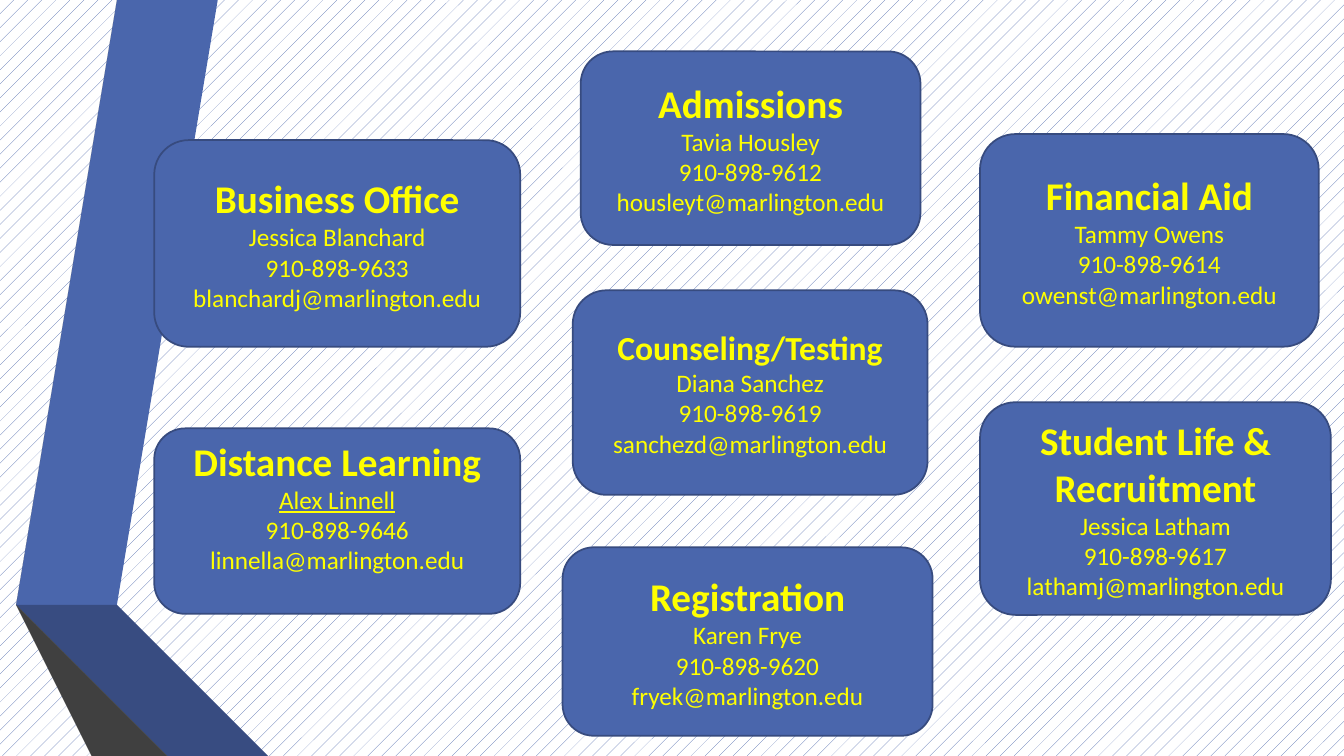
from pptx import Presentation
from pptx.dml.color import RGBColor
from pptx.enum.dml import MSO_PATTERN
from pptx.enum.shapes import MSO_SHAPE as Shape
from pptx.enum.text import MSO_ANCHOR as Anchor, PP_ALIGN as Align
from pptx.util import Inches, Pt

COLORS = {
    "blue": "4A66AC", "outline": "374B7F", "navy": "384C81",
    "navy edge": "253356", "grey": "595959", "dark grey": "404040",
    "grey edge": "262626", "yellow": "FFFF00", "white": "FFFFFF",
}
DOMAIN = "marlington.edu"
HEADING = {"name": "Calibri", "size": Pt(28), "bold": True}
DETAIL = {"name": "Calibri", "size": Pt(18), "bold": False}

# Ribbon outlines in inches, measured from the corner of the ribbon box
RIBBONS = [
    ("blue", [(0.34, 5.78), (0.61, 5.83), (1.57, 0), (1.29, 0)]),
    ("grey", [(1.23, 0), (0.95, 0), (0, 5.73), (0.28, 5.77)]),
    ("grey edge", [(0, 5.73), (1.29, 7.5), (1.35, 7.5)]),
    ("navy edge", [(0.34, 5.79), (1.92, 7.5), (1.98, 7.5)]),
    ("navy", [(0.34, 5.78), (1.98, 7.5), (2.67, 7.5), (0.61, 5.83)]),
    ("dark grey", [(1.86, 7.5), (0.32, 5.83), (0.27, 5.77), (0, 5.73),
                   (1.35, 7.5)]),
]

# Box (left, top, width, height), department, person, phone ending, mailbox, formats
CARDS = [
    ((5.76, 0.51, 3.37, 1.92), "Admissions", "Tavia Housley", "9612", "housleyt", {}),
    ((5.58, 5.43, 3.67, 1.87), "Registration", "Karen Frye", "9620", "fryek", {}),
    ((9.72, 1.33, 3.36, 2.11), "Financial Aid", "Tammy Owens", "9614", "owenst", {}),
    ((1.53, 1.39, 3.63, 2.05), "Business Office", "Jessica Blanchard", "9633",
     "blanchardj", {}),
    ((5.68, 2.88, 3.52, 2.03), "Counseling/Testing", "Diana Sanchez", "9619",
     "sanchezd", {"heading": {"size": Pt(24)}}),
    ((9.72, 3.99, 3.48, 2.11), "Student Life & Recruitment", "Jessica Latham",
     "9617", "lathamj", {}),
    ((1.53, 4.25, 3.63, 1.84), "Distance Learning", "Alex Linnell", "9646",
     "linnella", {"person": {"underline": True}, "bottom": 0.35}),
]


def color(name):
    return RGBColor.from_string(COLORS[name])


def paint(shape, fill):
    shape.shadow.inherit = False
    shape.fill.solid()
    shape.fill.fore_color.rgb = color(fill)


def draw_background(page):
    fill = page.background.fill
    fill.patterned()
    fill.pattern = MSO_PATTERN.PERCENT_5
    fill.fore_color.rgb = color("blue")
    fill.back_color.rgb = color("white")


def draw_ribbons(page, left, top):
    for fill, points in RIBBONS:
        start, *rest = points
        builder = page.shapes.build_freeform(*start, scale=Inches(1))
        builder.add_line_segments(rest, close=True)
        ribbon = builder.convert_to_shape(Inches(left), Inches(top))
        paint(ribbon, fill)
        ribbon.line.fill.background()


def draw_card(page, box, department, person, phone, mailbox, formats):
    card = page.shapes.add_shape(Shape.ROUNDED_RECTANGLE, *map(Inches, box))
    paint(card, "blue")
    card.line.color.rgb = color("outline")
    card.line.width = Pt(1.25)

    frame = card.text_frame
    frame.word_wrap = True
    frame.vertical_anchor = Anchor.MIDDLE
    frame.margin_bottom = Inches(formats.get("bottom", 0.05))
    lines = [
        (department, HEADING | formats.get("heading", {})),
        (person, DETAIL | formats.get("person", {})),
        (f"910-898-{phone}", DETAIL),
        (f"{mailbox}@{DOMAIN}", DETAIL),
    ]
    for number, (text, font_values) in enumerate(lines):
        para = frame.add_paragraph() if number else frame.paragraphs[0]
        para.alignment = Align.CENTER
        span = para.add_run()
        span.text = text
        span.font.color.rgb = color("yellow")
        for name, value in font_values.items():
            setattr(span.font, name, value)


def main():
    deck = Presentation()
    deck.slide_width, deck.slide_height = Inches(13.33), Inches(7.5)
    page = deck.slides.add_slide(deck.slide_layouts[6])
    draw_background(page)
    draw_ribbons(page, 0.16, 0)
    for card in CARDS:
        draw_card(page, *card)
    deck.save("out.pptx")


if __name__ == "__main__":
    main()
